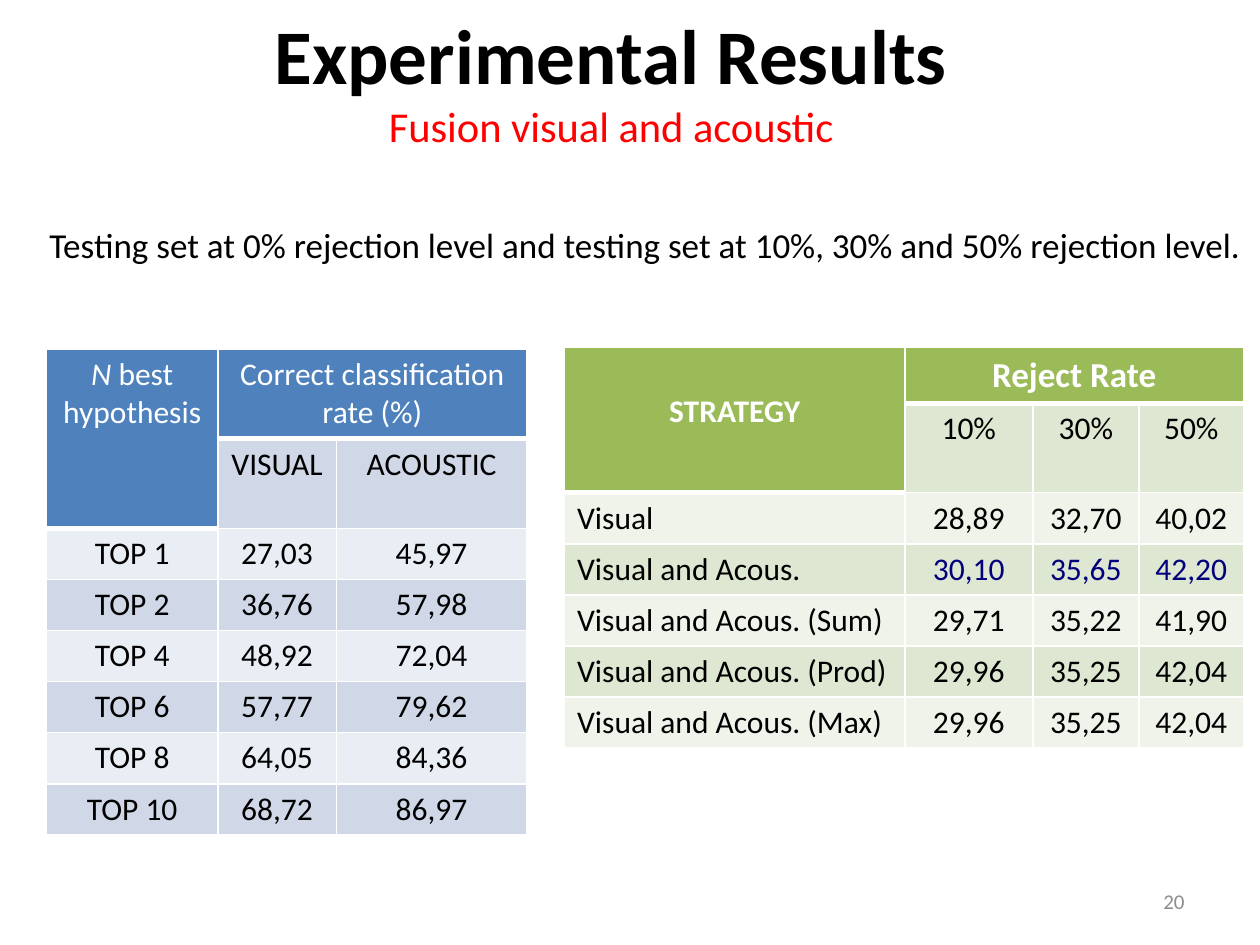
from dataclasses import dataclass

from lxml import etree
from pptx import Presentation
from pptx.dml.color import RGBColor
from pptx.enum.text import MSO_ANCHOR, PP_ALIGN
from pptx.oxml.ns import qn
from pptx.util import Cm, Pt

LEFT, CENTER, RIGHT = PP_ALIGN.LEFT, PP_ALIGN.CENTER, PP_ALIGN.RIGHT
MIDDLE, BOTTOM = MSO_ANCHOR.MIDDLE, MSO_ANCHOR.BOTTOM


@dataclass(frozen=True)
class Theme:
    font: str = "Calibri"
    ink: str = "000000"
    white: str = "FFFFFF"
    red: str = "FF0000"
    navy: str = "02007B"
    gray: str = "8C8C8C"
    blue: tuple = ("4F81BD", "D0D8E8", "E9EDF4")  # head, dark band, light band
    green: tuple = ("9BBB59", "DEE7D1", "EFF3EA")
    title: float = 44.1
    sub: float = 24.3
    body: float = 20
    cell: float = 18
    foot: float = 12


T = Theme()


def write(para, text, size=T.cell, color=T.ink, bold=False, italic=False, align=CENTER):
    """Add one formatted run to a paragraph."""
    para.alignment = align
    run = para.add_run()
    run.text = text
    font = run.font
    font.name, font.size, font.bold, font.italic = T.font, Pt(size), bold, italic
    font.color.rgb = RGBColor.from_string(color)


def edge(cell, top, bottom):
    """Draw white cell borders; top and bottom are widths in points."""
    props = cell._tc.get_or_add_tcPr()
    for side, width in (("L", 1), ("R", 1), ("T", top), ("B", bottom)):
        line = etree.SubElement(props, qn(f"a:ln{side}"), w=str(Pt(width)))
        fill = etree.SubElement(line, qn("a:solidFill"))
        etree.SubElement(fill, qn("a:srgbClr"), val=T.white)


deck = Presentation()
deck.slide_width, deck.slide_height = Cm(25.4), Cm(19.05)
slide = deck.slides.add_slide(deck.slide_layouts[1])

# Title and subtitle
title = slide.shapes.title
title.left, title.top, title.width, title.height = Cm(1.27), Cm(0), Cm(22.86), Cm(3.18)
frame = title.text_frame
frame.vertical_anchor = MIDDLE
head = frame.paragraphs[0]
write(head, "Experimental Results", size=T.title, bold=True)
head._p.get_or_add_pPr().set("marR", str(Cm(0.76)))
write(frame.add_paragraph(), "Fusion visual and acoustic", size=T.sub, color=T.red)

# Statement above the tables
body = slide.placeholders[1]
body.left, body.top, body.width, body.height = Cm(0.74), Cm(3.71), Cm(24.66), Cm(1.78)
body.text_frame.vertical_anchor = BOTTOM
para = body.text_frame.paragraphs[0]
write(para, "Testing set at 0% rejection level and testing set at 10%, 30% and 50% "
      "rejection level.", size=T.body, align=LEFT)
props = para._p.get_or_add_pPr()
props.set("marL", "0")
props.set("indent", "0")
etree.SubElement(props, qn("a:buNone"))

# Tables: two head rows, then banded data rows
ranks = [
    ["", "", ""],
    ["", "VISUAL", "ACOUSTIC"],
    ["TOP 1", "27,03", "45,97"],
    ["TOP 2", "36,76", "57,98"],
    ["TOP 4", "48,92", "72,04"],
    ["TOP 6", "57,77", "79,62"],
    ["TOP 8", "64,05", "84,36"],
    ["TOP 10", "68,72", "86,97"],
]
rates = [
    ["", "", "", ""],
    ["", "10%", "30%", "50%"],
    ["Visual", "28,89", "32,70", "40,02"],
    ["Visual and Acous.", "30,10", "35,65", "42,20"],
    ["Visual and Acous. (Sum)", "29,71", "35,22", "41,90"],
    ["Visual and Acous. (Prod)", "29,96", "35,25", "42,04"],
    ["Visual and Acous. (Max)", "29,96", "35,25", "42,04"],
]
BEST = 3  # row of the best reject rates
plans = [
    (ranks, T.blue, 0.94, 7.04, [3.45, 2.39, 3.84], 1.79, CENTER, None),
    (rates, T.green, 11.38, 7.01, [6.86, 2.58, 2.14, 2.11], 1.12, LEFT, BEST),
]
grids = []
for data, tints, left, top, cols, first, align, best in plans:
    highs = [first, 1.8] + [1.03] * (len(data) - 2)
    grid = slide.shapes.add_table(len(data), len(cols), Cm(left), Cm(top),
                                  Cm(sum(cols)), Cm(sum(highs))).table
    grids.append(grid)
    for col, width in zip(grid.columns, cols):
        col.width = Cm(width)
    for row, high in zip(grid.rows, highs):
        row.height = Cm(high)
    grid.cell(0, 0).merge(grid.cell(1, 0))
    grid.cell(0, 1).merge(grid.cell(0, len(cols) - 1))
    for r, texts in enumerate(data):
        for c, text in enumerate(texts):
            cell = grid.cell(r, c)
            last = 1 if c == 0 else 0  # last head row of this column
            edge(cell, 3 if r == last + 1 else 1, 3 if r <= last else 1)
            cell.fill.solid()
            tint = tints[0] if r <= last else tints[2 - r % 2]
            cell.fill.fore_color.rgb = RGBColor.from_string(tint)
            if text:
                write(cell.text_frame.paragraphs[0], text,
                      color=T.navy if r == best and c else T.ink,
                      align=CENTER if c else align)

# Head cells
rank, rate = grids
para = rank.cell(0, 0).text_frame.paragraphs[0]
write(para, "N ", color=T.white, italic=True)
write(para, "best hypothesis", color=T.white)
write(rank.cell(0, 1).text_frame.paragraphs[0], "Correct classification rate (%)",
      color=T.white)
rate.cell(0, 0).margin_top = Cm(0.9)
write(rate.cell(0, 0).text_frame.paragraphs[0], "STRATEGY", color=T.white, bold=True)
write(rate.cell(0, 1).text_frame.paragraphs[0], "Reject Rate", size=T.body,
      color=T.white, bold=True)

# Page number
page = slide.shapes.add_textbox(Cm(18.2), Cm(17.66), Cm(5.93), Cm(1.01)).text_frame
page.word_wrap = True
page.vertical_anchor = MIDDLE
write(page.paragraphs[0], "20", size=T.foot, color=T.gray, align=RIGHT)

deck.save("out.pptx")
